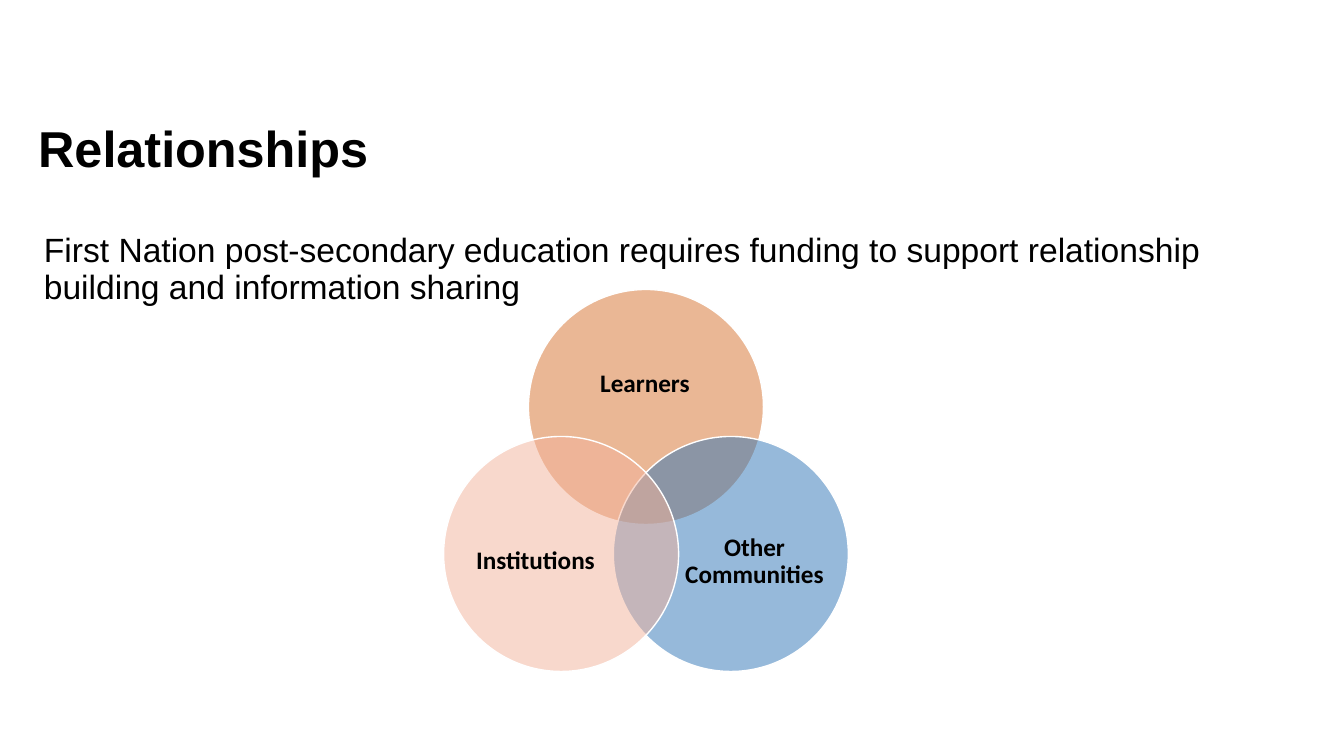
from math import cos, radians, sin

from lxml import etree
from pptx import Presentation
from pptx.dml.color import RGBColor
from pptx.enum.shapes import MSO_SHAPE
from pptx.enum.text import MSO_ANCHOR, MSO_AUTO_SIZE, PP_ALIGN
from pptx.oxml.ns import qn
from pptx.util import Pt

ELLIPSE = MSO_SHAPE.OVAL
TOP, MIDDLE = MSO_ANCHOR.TOP, MSO_ANCHOR.MIDDLE
LEFT, CENTER = PP_ALIGN.LEFT, PP_ALIGN.CENTER
NO_AUTOFIT = MSO_AUTO_SIZE.NONE

TITLE = "Relationships"
TITLE_BOX = (28, 119, 874, 86)
STATEMENT = ("First Nation post-secondary education requires funding to support "
             "relationship building and information sharing")
STATEMENT_BOX = (34, 229, 1203, 402)

VENN = [
    ("Learners", "D7712C", -90, (559, 331, 172, 106)),
    ("Other Communities", "2E75B6", 30, (684, 497, 141, 129)),
    ("Institutions", "F3B39B", 150, (465, 497, 141, 129)),
]
VENN_CENTER = (646, 505)
VENN_REACH = 98
DIAMETER = 235
OPACITY = 50

SLIDE_SIZE = (1344, 756)
EMU_PER_PX = 914400 / 100.8


def px(*lengths):
    return [round(length * EMU_PER_PX) for length in lengths]


def color(hex_code):
    return RGBColor.from_string(hex_code)


def write(box, text, font_name, size, bold=False, align=LEFT, anchor=TOP):
    frame = box.text_frame
    frame.text = text
    frame.word_wrap = True
    frame.auto_size = NO_AUTOFIT
    frame.vertical_anchor = anchor
    paragraph = frame.paragraphs[0]
    paragraph.alignment = align
    paragraph.line_spacing = 0.9
    font = paragraph.runs[0].font
    font.name = font_name
    font.size = Pt(size)
    font.bold = bold
    font.color.rgb = color("000000")
    return frame


def add_circle(slide, fill, angle):
    left = VENN_CENTER[0] + VENN_REACH * cos(radians(angle)) - DIAMETER / 2
    top = VENN_CENTER[1] + VENN_REACH * sin(radians(angle)) - DIAMETER / 2
    circle = slide.shapes.add_shape(ELLIPSE, *px(left, top, DIAMETER, DIAMETER))
    circle.shadow.inherit = False
    circle.fill.solid()
    circle.fill.fore_color.rgb = color(fill)
    fill_color = circle._element.spPr.find(qn("a:solidFill"))[0]
    etree.SubElement(fill_color, qn("a:alpha")).set("val", str(OPACITY * 1000))
    circle.line.color.rgb = color("FFFFFF")
    circle.line.width = Pt(1)


def add_label(slide, text, bounds):
    label = slide.shapes.add_textbox(*px(*bounds))
    frame = write(label, text, "Calibri", 18, True, CENTER, MIDDLE)
    frame.margin_left = frame.margin_right = 0
    frame.margin_top = frame.margin_bottom = 0


def main():
    deck = Presentation()
    deck.slide_width, deck.slide_height = px(*SLIDE_SIZE)
    slide = deck.slides.add_slide(deck.slide_layouts[5])

    title = slide.shapes.title
    title.left, title.top, title.width, title.height = px(*TITLE_BOX)
    write(title, TITLE, "Arial", 36, bold=True)

    statement = slide.shapes.add_textbox(*px(*STATEMENT_BOX))
    write(statement, STATEMENT, "Arial", 24)

    for name, fill, angle, label_box in VENN:
        add_circle(slide, fill, angle)
        add_label(slide, name, label_box)

    deck.save("out.pptx")


if __name__ == "__main__":
    main()
